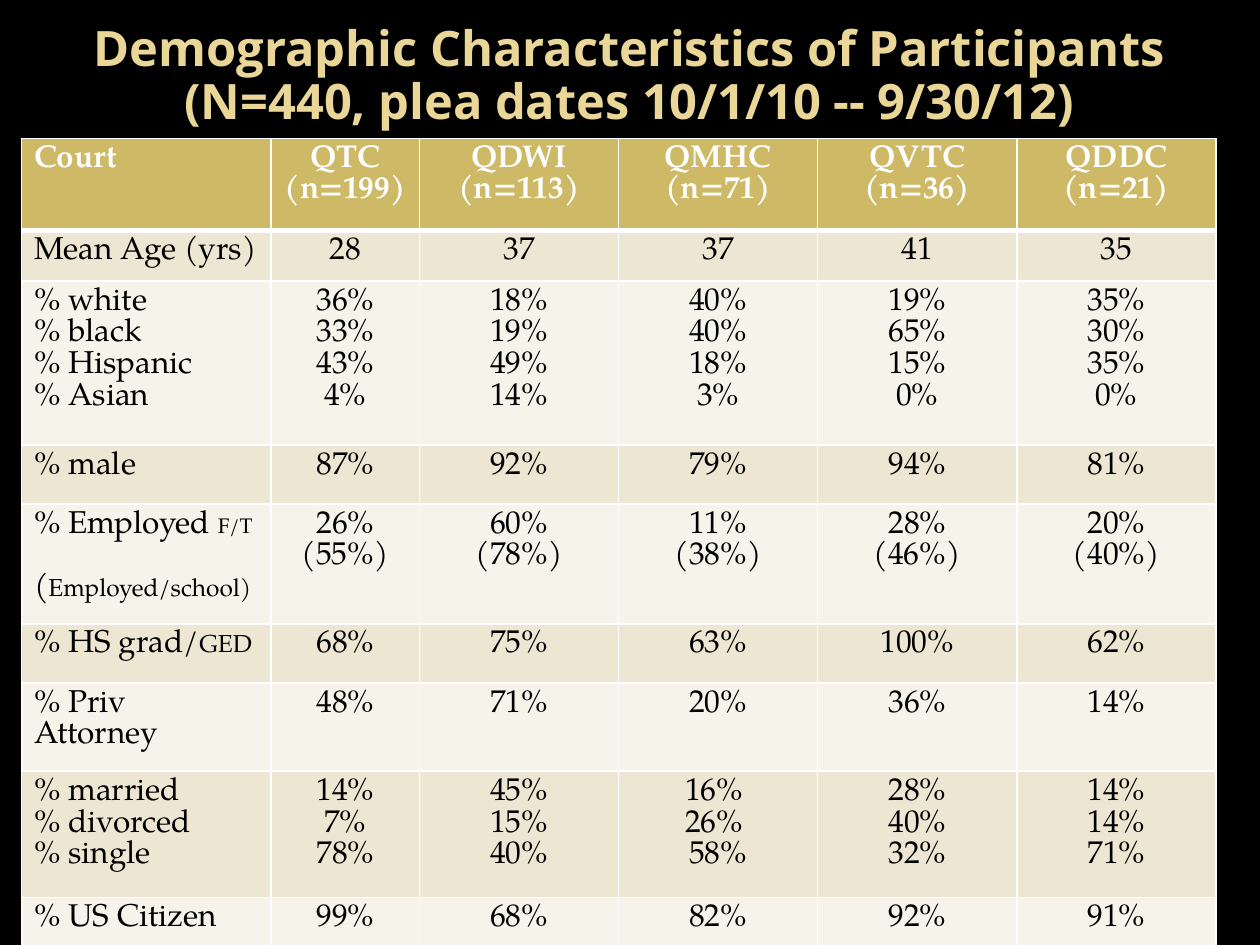
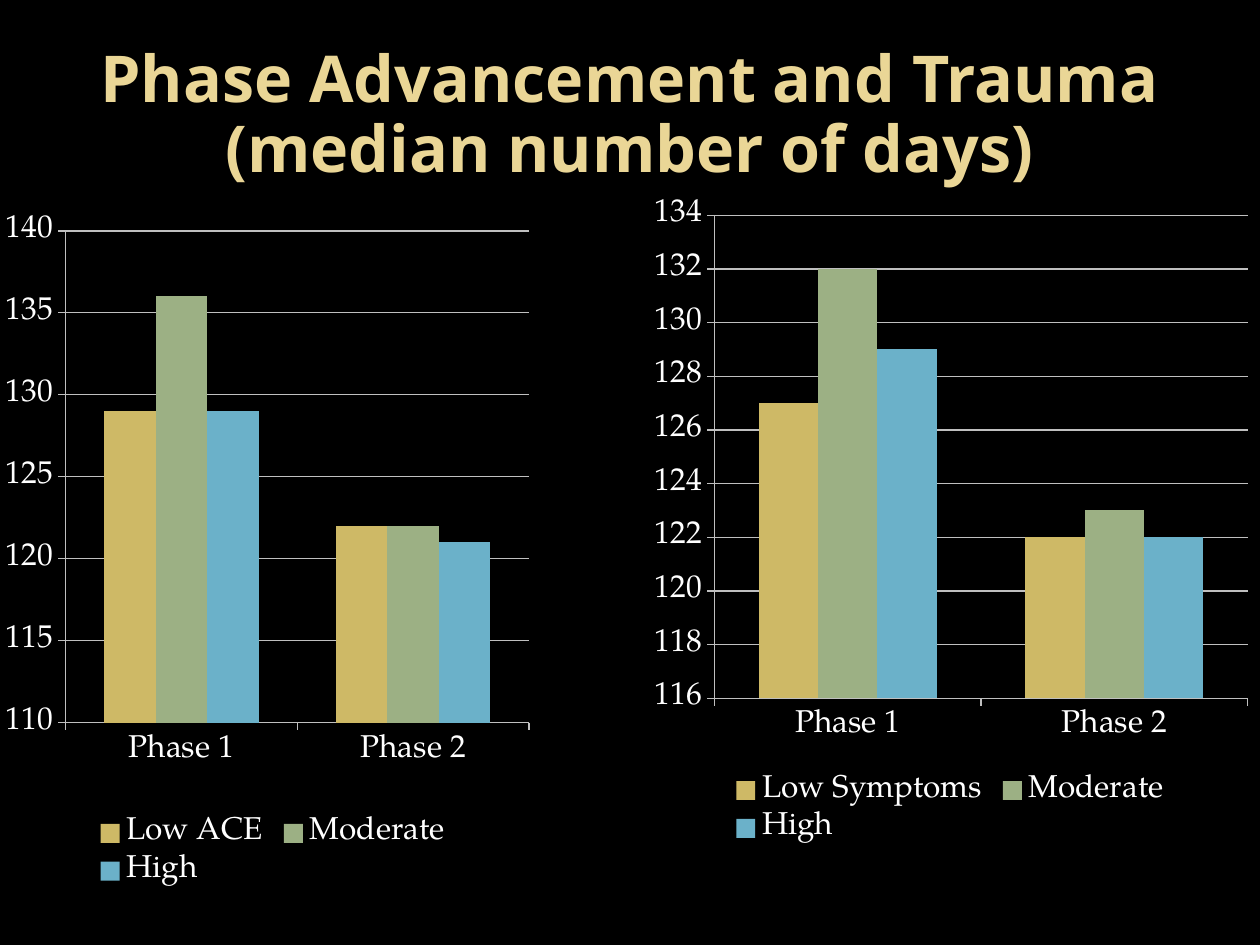
from lxml import etree
from pptx import Presentation
from pptx.chart.data import CategoryChartData
from pptx.dml.color import RGBColor
from pptx.enum.chart import XL_CHART_TYPE, XL_LEGEND_POSITION, XL_TICK_MARK
from pptx.enum.text import MSO_ANCHOR, PP_ALIGN
from pptx.oxml import parse_xml
from pptx.oxml.ns import nsdecls, qn
from pptx.util import Inches, Pt

CENTER, LEFT = PP_ALIGN.CENTER, PP_ALIGN.LEFT
MIDDLE = MSO_ANCHOR.MIDDLE
CLUSTERED = XL_CHART_TYPE.COLUMN_CLUSTERED
BOTTOM = XL_LEGEND_POSITION.BOTTOM
TICK_OUT = XL_TICK_MARK.OUTSIDE

COLORS = {
    "background": "000000", "title": "EAD696", "light": "FFFFFF", "dark": "000000",
    "header": "CEB966", "odd_row": "EDE6D3", "even_row": "F6F3EA", "axis": "BFBFBF",
}
SERIES_COLORS = ["CEB966", "9CB084", "6BB1C9"]
TITLE_FONT, BODY_FONT = "Open Sans", "TeX Gyre Pagella"
BODY_SIZE = 18

DEMOGRAPHICS_TITLE = {
    "text": "Demographic Characteristics of Participants\n(N=440, plea dates 10/1/10 -- 9/30/12)",
    "box": (0.33, 0, 9.33, 1.22), "size": 27.9,
}
TABLE_BOX = (0.17, 1.1, 9.5, 5.95)
COLUMN_WIDTHS = [1.98, 1.18] + [1.58] * 4
# Each row: height, then cells; a cell lists its lines, a line may mix (text, size) runs.
DEMOGRAPHICS = [
    (0.73, [["Court"], ["QTC", "(n=199)"], ["QDWI", "(n=113)"], ["QMHC", "(n=71)"],
            ["QVTC", "(n=36)"], ["QDDC", "(n=21)"]]),
    (0.4, [["Mean Age (yrs)"], ["28"], ["37"], ["37"], ["41"], ["35"]]),
    (1.23, [["% white", "% black", "% Hispanic", "% Asian"],
            ["36%", "33%", "43%", "4%"], ["18%", "19%", "49%", "14%"],
            ["40%", "40%", "18%", "3%"], ["19%", "65%", "15%", "0%"],
            ["35%", "30%", "35%", "0%"]]),
    (0.47, [["% male"], ["87%"], ["92%"], ["79%"], ["94%"], ["81%"]]),
    (0.86, [[[("% Employed ", 18), ("F/T", 12)], [("(", 18), ("Employed/school)", 14)]],
            ["26%", "(55%)"], ["60%", "(78%)"], ["11%", "(38%)"],
            ["28%", "(46%)"], ["20%", "(40%)"]]),
    (0.47, [[[("% HS grad/", 18), ("GED", 14)]],
            ["68%"], ["75%"], ["63%"], ["100%"], ["62%"]]),
    (0.48, [["% Priv Attorney"], ["48%"], ["71%"], ["20%"], ["36%"], ["14%"]]),
    (0.95, [["% married", "% divorced", "% single"],
            ["14%", "7%", "78%"], ["45%", "15%", "40%"], ["16% ", "26% ", "58%"],
            ["28%", "40%", "32%"], ["14%", "14%", "71%"]]),
    (0.36, [["% US Citizen"], ["99%"], ["68%"], ["82%"], ["92%"], ["91%"]]),
]

ADVANCEMENT_TITLE = {
    "text": "Phase Advancement and Trauma\n(median number of days)",
    "box": (0.5, 0.3, 9, 1.25), "size": 36.9,
}
PHASES = ["Phase 1", "Phase 2"]
ADVANCEMENT_CHARTS = [
    {"box": (0, 1.67, 4.33, 5.42), "plot": (0.12, 0.03, 0.85, 0.72), "scale": (110, 140, 5),
     "days": {"Low ACE": (129, 122), "Moderate": (136, 122), "High": (129, 121)}},
    {"box": (5.08, 1.5, 4.92, 5.25), "plot": (0.12, 0.04, 0.86, 0.73), "scale": (116, 134, 2),
     "days": {"Low Symptoms": (127, 122), "Moderate": (132, 123), "High": (129, 122)}},
]


def rgb(name):
    return RGBColor.from_string(COLORS[name])


def inches(box):
    return [Inches(length) for length in box]


def set_font(font, name, size, color, bold=False):
    font.name, font.size, font.bold = name, Pt(size), bold
    font.color.rgb = rgb(color)


def add_titled_slide(prs, title):
    slide = prs.slides.add_slide(prs.slide_layouts[6])
    slide.background.fill.solid()
    slide.background.fill.fore_color.rgb = rgb("background")
    frame = slide.shapes.add_textbox(*inches(title["box"])).text_frame
    frame.word_wrap = True
    frame.vertical_anchor = MIDDLE
    heading = frame.paragraphs[0]
    heading.text = title["text"]
    heading.alignment = CENTER
    heading.line_spacing = 0.9
    set_font(heading.font, TITLE_FONT, title["size"], "title", True)
    return slide


def add_borders(cell, is_header, below_header):
    props = cell._tc.get_or_add_tcPr()
    widths = {"lnL": 1, "lnR": 1, "lnT": 3 if below_header else 1, "lnB": 3 if is_header else 1}
    for side, width in widths.items():
        props.append(parse_xml(
            f'<a:{side} {nsdecls("a")} w="{Pt(width)}"><a:solidFill>'
            f'<a:srgbClr val="{COLORS["light"]}"/></a:solidFill></a:{side}>'))


def write_cell(cell, lines, align, color, bold):
    frame = cell.text_frame
    for index, line in enumerate(lines):
        paragraph = frame.add_paragraph() if index else frame.paragraphs[0]
        paragraph.alignment = align
        set_font(paragraph.font, BODY_FONT, BODY_SIZE, color, bold)
        if isinstance(line, str):
            paragraph.add_run().text = line
            continue
        if index:
            paragraph.space_before = Pt(BODY_SIZE)
        for text, size in line:
            run = paragraph.add_run()
            run.text = text
            run.font.size = Pt(size)


def add_demographics(slide):
    table = slide.shapes.add_table(
        len(DEMOGRAPHICS), len(COLUMN_WIDTHS), *inches(TABLE_BOX)).table
    for column, width in zip(table.columns, COLUMN_WIDTHS):
        column.width = Inches(width)
    for r, (height, cells) in enumerate(DEMOGRAPHICS):
        table.rows[r].height = Inches(height)
        is_header = r == 0
        fill = "header" if is_header else "odd_row" if r % 2 else "even_row"
        for c, lines in enumerate(cells):
            cell = table.cell(r, c)
            add_borders(cell, is_header, r == 1)
            cell.fill.solid()
            cell.fill.fore_color.rgb = rgb(fill)
            write_cell(cell, lines, CENTER if c else LEFT,
                       "light" if is_header else "dark", is_header)


def place_plot(chart, plot):
    """Fix the inner plot area as fractions of the chart."""
    area = chart._chartSpace.chart.plotArea
    for old in area.findall(qn("c:layout")):
        area.remove(old)
    layout = etree.Element(qn("c:layout"))
    manual = etree.SubElement(layout, qn("c:manualLayout"))
    settings = [("layoutTarget", "inner"), ("xMode", "edge"), ("yMode", "edge")]
    for tag, value in settings + list(zip("xywh", plot)):
        etree.SubElement(manual, qn(f"c:{tag}")).set("val", str(value))
    area.insert(0, layout)


def add_advancement_chart(slide, content):
    data = CategoryChartData()
    data.categories = PHASES
    for level, days in content["days"].items():
        data.add_series(level, days)
    chart = slide.shapes.add_chart(CLUSTERED, *inches(content["box"]), data).chart
    set_font(chart.font, BODY_FONT, BODY_SIZE, "light")
    chart.has_title = False
    chart.has_legend = True
    chart.legend.position = BOTTOM
    chart.legend.include_in_layout = False
    place_plot(chart, content["plot"])

    bars = chart.plots[0]
    bars.gap_width, bars.overlap, bars.vary_by_categories = 150, 0, False
    for series, color in zip(bars.series, SERIES_COLORS):
        series.format.fill.solid()
        series.format.fill.fore_color.rgb = RGBColor.from_string(color)

    days_axis = chart.value_axis
    days_axis.minimum_scale, days_axis.maximum_scale, days_axis.major_unit = content["scale"]
    days_axis.has_major_gridlines = True
    for axis in (days_axis, chart.category_axis):
        axis.major_tick_mark = TICK_OUT
    for part in (days_axis, chart.category_axis, days_axis.major_gridlines):
        part.format.line.color.rgb = rgb("axis")
        part.format.line.width = Pt(0.75)


def main():
    prs = Presentation()
    prs.slide_width, prs.slide_height = Inches(10), Inches(7.5)
    add_demographics(add_titled_slide(prs, DEMOGRAPHICS_TITLE))
    advancement = add_titled_slide(prs, ADVANCEMENT_TITLE)
    for content in ADVANCEMENT_CHARTS:
        add_advancement_chart(advancement, content)
    prs.save("out.pptx")


if __name__ == "__main__":
    main()
